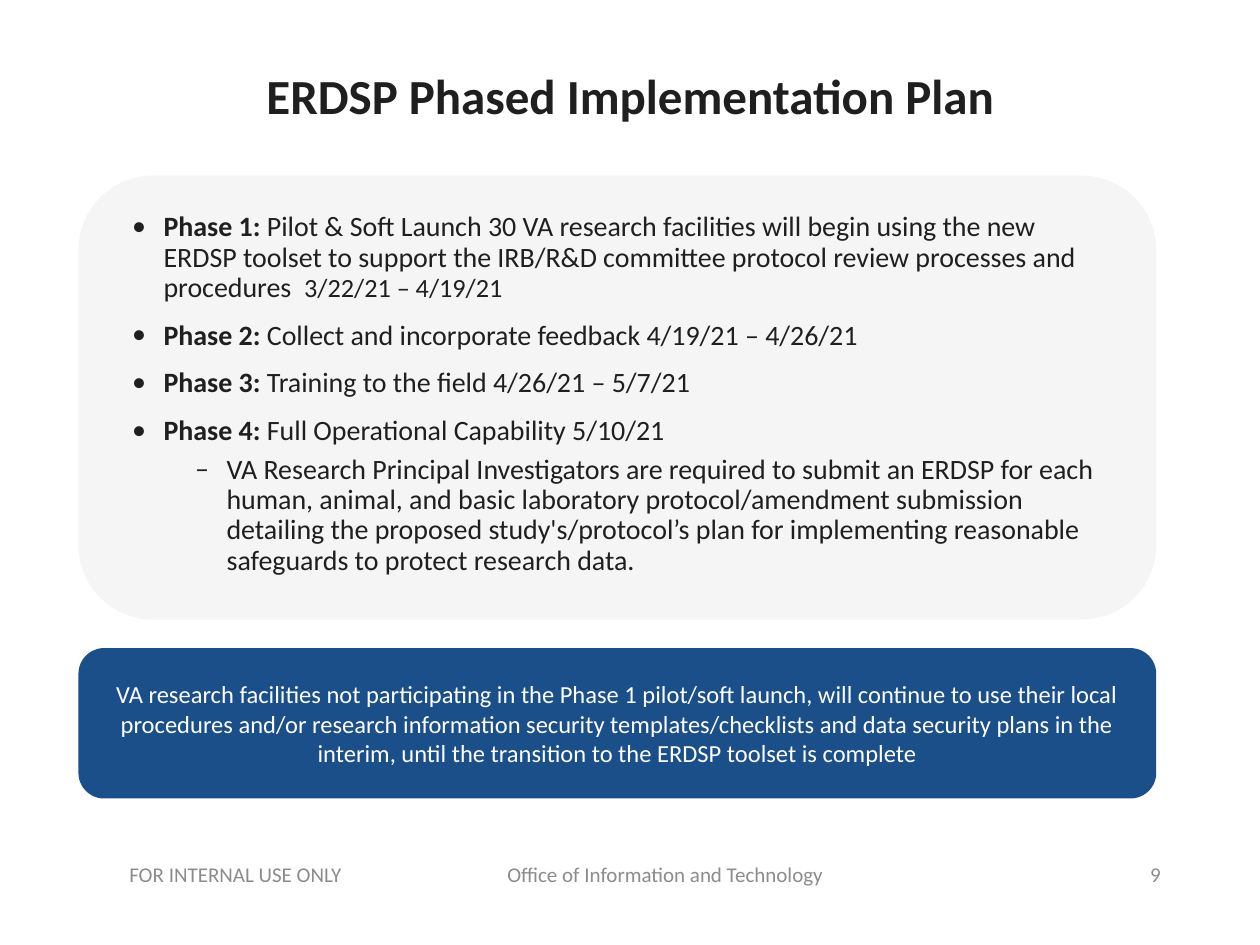
"""Build the ERDSP phased implementation plan slide."""
import pptx
import pptx.dml.color
import pptx.enum.shapes
import pptx.enum.text
import pptx.util
import lxml.etree

INK, PALE, BLUE, GREY, WHITE = "1F1F1F", "F5F5F5", "1B4F89", "8C8C8C", "FFFFFF"
ALIGN = pptx.enum.text.PP_ALIGN
ROUNDED = pptx.enum.shapes.MSO_SHAPE.ROUNDED_RECTANGLE
DRAWING = "{http://schemas.openxmlformats.org/drawingml/2006/main}"

deck = pptx.Presentation()
deck.slide_width = pptx.util.Inches(10)
deck.slide_height = pptx.util.Inches(7.5)
page = deck.slides.add_slide(deck.slide_layouts[6])


def area(left, top, width, height):
    """Turn percentages of the slide into lengths."""
    sides = (deck.slide_width, deck.slide_height) * 2
    return [int(side * share / 100) for side, share in zip(sides, (left, top, width, height))]


def paint(target, color):
    """Set a font, fill or line to a hex colour."""
    if hasattr(target, "solid"):
        target.solid()
        target.fore_color.rgb = pptx.dml.color.RGBColor.from_string(color)
    else:
        target.color.rgb = pptx.dml.color.RGBColor.from_string(color)


panels = []
for top, height, color in [(18.67, 46.8, PALE), (68.67, 15.73, BLUE)]:
    panel = page.shapes.add_shape(ROUNDED, *area(6.3, top, 85.4, height))
    panel.shadow.inherit = False
    paint(panel.fill, color)
    paint(panel.line, color)
    panel.line.width = pptx.util.Pt(1)
    panels.append(panel)

title = page.shapes.add_textbox(*area(6.9, 5.47, 86.2, 10))
footer = page.shapes.add_textbox(*area(6.9, 89.87, 61.8, 5.33))
number = page.shapes.add_textbox(*area(70.6, 89.87, 22.5, 5.33))

captions = [
    (title, "ERDSP Phased Implementation Plan", 28, INK, True, ALIGN.CENTER),
    (panels[1], "VA research facilities not participating in the Phase 1 pilot/soft launch, "
     "will continue to use their local procedures and/or research information security "
     "templates/checklists and data security plans in the interim, until the transition "
     "to the ERDSP toolset is complete", 14, WHITE, False, ALIGN.CENTER),
    (footer, "FOR INTERNAL USE ONLY\t\tOffice of Information and Technology",
     12, GREY, False, ALIGN.CENTER),
    (number, "9", 12, GREY, False, ALIGN.RIGHT),
]
for box, text, size, color, bold, align in captions:
    box.text_frame.word_wrap = True
    box.text_frame.vertical_anchor = pptx.enum.text.MSO_ANCHOR.MIDDLE
    para = box.text_frame.paragraphs[0]
    para.add_run().text = text
    para.alignment = align
    para.font.name = "Calibri"
    para.font.size = pptx.util.Pt(size)
    para.font.bold = bold
    paint(para.font, color)
title.text_frame.paragraphs[0].line_spacing = 0.9
footer_layout = footer.text_frame.paragraphs[0]._p.get_or_add_pPr()
footer_layout.set("defTabSz", str(pptx.util.Inches(1)))

phases = [
    (0, "Phase 1: ", "Pilot & Soft Launch 30 VA research facilities will begin using the new "
     "ERDSP toolset to support the IRB/R&D committee protocol review processes and procedures  ",
     "3/22/21 – 4/19/21"),
    (0, "Phase 2:", " Collect and incorporate feedback 4/19/21 – 4/26/21", ""),
    (0, "Phase 3: ", "Training to the field 4/26/21 – 5/7/21", ""),
    (0, "Phase 4:", " Full Operational Capability 5/10/21", ""),
    (1, "", "VA Research Principal Investigators are required to submit an ERDSP for each "
     "human, animal, and basic laboratory protocol/amendment submission detailing the proposed "
     "study's/protocol’s plan for implementing reasonable safeguards to protect research data.",
     ""),
]
body = page.shapes.add_textbox(*area(9.5, 21.87, 79.1, 43.6)).text_frame
body.word_wrap = True
for index, (level, label, text, dates) in enumerate(phases):
    para = body.add_paragraph() if index else body.paragraphs[0]
    para.level = level
    para.line_spacing = 0.9
    if index:
        para.space_before = pptx.util.Pt((10, 5)[level])
    layout = para._p.get_or_add_pPr()
    layout.set("marL", str(pptx.util.Inches((0.25, 0.75)[level])))
    layout.set("indent", str(pptx.util.Inches(-0.25)))
    lxml.etree.SubElement(layout, DRAWING + "buFont", typeface="Calibri")
    lxml.etree.SubElement(layout, DRAWING + "buChar", char="•–"[level])
    para.font.name = "Calibri"
    para.font.size = pptx.util.Pt(16)
    paint(para.font, INK)
    for words, bold, size in [(label, True, 16), (text, False, 16), (dates, False, 15)]:
        if words:
            span = para.add_run()
            span.text = words
            span.font.bold = bold
            span.font.size = pptx.util.Pt(size)

deck.save("out.pptx")
